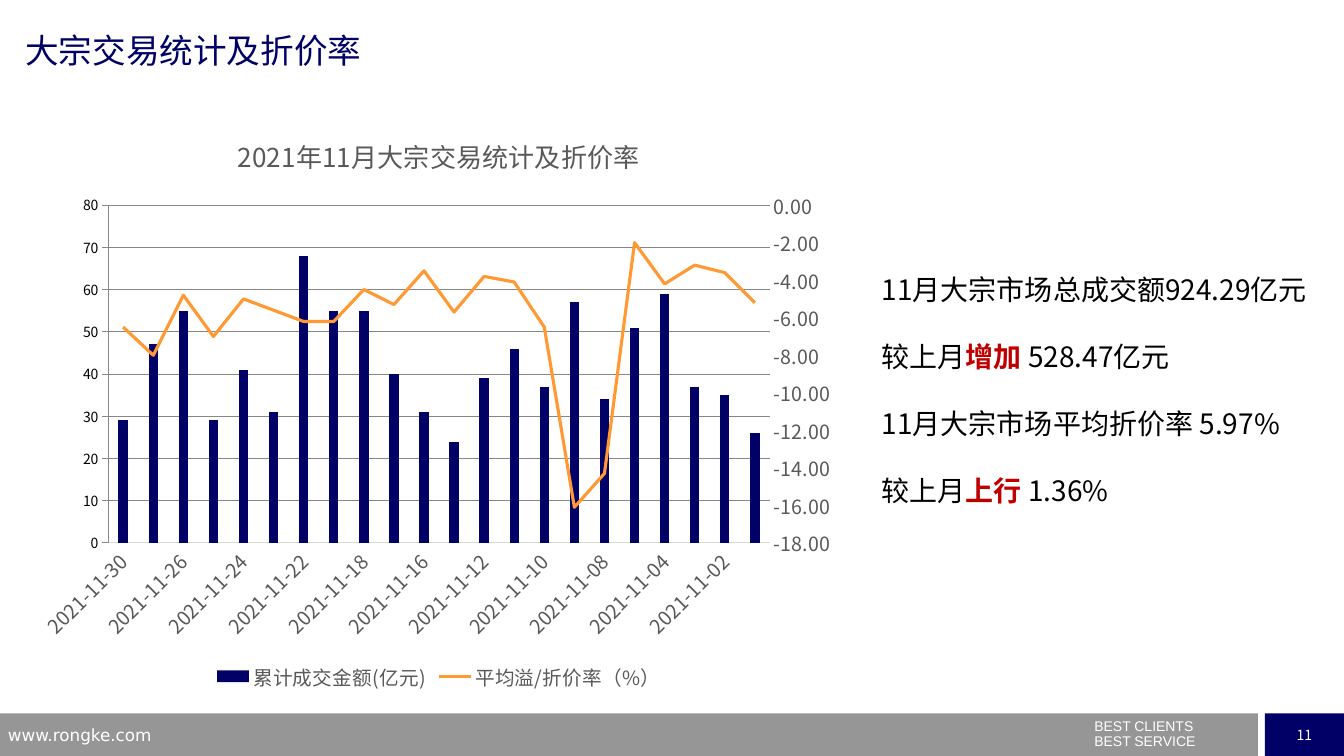
from dataclasses import dataclass

from pptx import Presentation
from pptx import util as u
from pptx.chart import axis as ax, data
from pptx.dml.color import RGBColor
from pptx.enum import chart as ch, shapes, text
from pptx.oxml import parse_xml
from pptx.oxml.ns import nsdecls, qn


@dataclass(frozen=True)
class Theme:
    navy: str = "000066"
    orange: str = "FF9933"
    red: str = "C00000"
    gray: str = "969696"
    label: str = "595959"
    grid: str = "D9D9D9"
    white: str = "FFFFFF"
    black: str = "000000"
    cjk: str = "Noto Sans CJK SC"
    latin: str = "Arial"
    web: str = "DejaVu Sans"
    title: float = 24
    body: float = 20
    chart_title: float = 18.6
    axis: float = 14
    url: float = 12
    small: float = 10


DAYS = (30, 29, 26, 25, 24, 23, 22, 19, 18, 17, 16, 15,
        12, 11, 10, 9, 8, 5, 4, 3, 2, 1)
AMOUNTS = (29, 47, 55, 29, 41, 31, 68, 55, 55, 40, 31, 24,
           39, 46, 37, 57, 34, 51, 59, 37, 35, 26)
RATES = (-6.5, -8, -4.8, -7, -5, -5.6, -6.2, -6.2, -4.5, -5.3, -3.5, -5.7,
         -3.8, -4.1, -6.5, -16.1, -14.3, -2, -4.2, -3.2, -3.6, -5.2)

LINE_PLOT = f"""<c:lineChart {nsdecls('c')}><c:grouping val="standard"/>
<c:varyColors val="0"/><c:marker val="1"/>
<c:axId val="301"/><c:axId val="302"/></c:lineChart>"""
RIGHT_AXIS = f"""<c:valAx {nsdecls('c')}><c:axId val="302"/>
<c:scaling><c:orientation val="minMax"/></c:scaling><c:delete val="0"/>
<c:axPos val="r"/><c:majorTickMark val="out"/><c:minorTickMark val="none"/>
<c:tickLblPos val="nextTo"/><c:crossAx val="301"/><c:crosses val="max"/></c:valAx>"""
HIDDEN_AXIS = f"""<c:catAx {nsdecls('c')}><c:axId val="301"/>
<c:scaling><c:orientation val="minMax"/></c:scaling><c:delete val="1"/>
<c:axPos val="b"/><c:crossAx val="302"/><c:crosses val="autoZero"/></c:catAx>"""
PLOT_LAYOUT = f"""<c:layout {nsdecls('c')}><c:manualLayout>
<c:layoutTarget val="inner"/><c:xMode val="edge"/><c:yMode val="edge"/>
<c:x val="0.1"/><c:y val="0.16"/><c:w val="0.8"/><c:h val="0.58"/>
</c:manualLayout></c:layout>"""


class Deck:
    def __init__(self, theme):
        self.theme = theme
        self.prs = Presentation()
        self.prs.slide_width, self.prs.slide_height = u.Cm(33.87), u.Cm(19.05)
        self.s = self.prs.slides.add_slide(self.prs.slide_layouts[6])

    def font(self, font, size, color, name=None, bold=False):
        font.size, font.bold, font.name = u.Pt(size), bold, name or self.theme.cjk
        font.color.rgb = RGBColor.from_string(color)

    def bar(self, box, color):
        sp = self.s.shapes.add_shape(shapes.MSO_SHAPE.RECTANGLE, *map(u.Cm, box))
        sp.shadow.inherit = False
        sp.fill.solid()
        sp.fill.fore_color.rgb = RGBColor.from_string(color)
        sp.line.fill.background()
        return sp

    def page_number(self, box, number):
        tf = self.bar(box, self.theme.navy).text_frame
        tf.text = number
        tf.vertical_anchor = text.MSO_ANCHOR.MIDDLE
        p = tf.paragraphs[0]
        p.alignment = text.PP_ALIGN.CENTER
        self.font(p.runs[0].font, self.theme.small, self.theme.white)

    def text(self, box, lines, size, color, name=None, spacing=1, before=0, inset=True):
        """Each line is a string or a list of strings; in a list, the second is stressed."""
        tf = self.s.shapes.add_textbox(*map(u.Cm, box)).text_frame
        tf.word_wrap = True
        if not inset:
            tf.margin_left = tf.margin_right = tf.margin_top = tf.margin_bottom = 0
        for i, line in enumerate(lines):
            p = tf.add_paragraph() if i else tf.paragraphs[0]
            p.line_spacing = spacing
            if i and before:
                p.space_before = u.Pt(before)
            for j, part in enumerate([line] if isinstance(line, str) else line):
                r = p.add_run()
                r.text = part
                self.font(r.font, size, self.theme.red if j == 1 else color, name, j == 1)

    def value_axis(self, axis, low, high, step, fmt):
        axis.minimum_scale, axis.maximum_scale, axis.major_unit = low, high, step
        axis.tick_labels.number_format = fmt
        axis.tick_labels.number_format_is_linked = False
        axis.format.line.fill.background()
        self.font(axis.tick_labels.font, self.theme.axis, self.theme.label)

    def grid_line(self, line):
        line.color.rgb = RGBColor.from_string(self.theme.grid)
        line.width = u.Pt(0.75)

    def combo_chart(self, box, title, cats, bars, line):
        """Columns on the left axis and a line on the right one."""
        t = self.theme
        cd = data.CategoryChartData()
        cd.categories = cats
        for name, values in (bars, line):
            cd.add_series(name, values)
        chart = self.s.shapes.add_chart(
            ch.XL_CHART_TYPE.COLUMN_CLUSTERED, *map(u.Cm, box), cd).chart
        self.font(chart.font, t.small, t.black)

        right = self.move_to_line(chart)
        column_plot, line_plot = chart.plots
        column_plot.gap_width = 219
        column_plot.vary_by_categories = False
        columns, curve = column_plot.series[0], line_plot.series[0]
        columns.format.fill.solid()
        columns.format.fill.fore_color.rgb = RGBColor.from_string(t.navy)
        curve.format.line.color.rgb = RGBColor.from_string(t.orange)
        curve.format.line.width = u.Pt(2.25)
        curve.marker.style = ch.XL_MARKER_STYLE.NONE
        curve.smooth = False

        left, dates = chart.value_axis, chart.category_axis
        self.value_axis(left, 0, 80, 10, r"0.00_);[Red]\(0.00\)")
        self.value_axis(right, -18, 0, 2, "0.00")
        left.major_tick_mark = dates.major_tick_mark = ch.XL_TICK_MARK.NONE
        self.grid_line(left.major_gridlines.format.line)
        self.grid_line(dates.format.line)
        self.font(dates.tick_labels.font, t.axis, t.label)
        dates._element.find(qn("c:txPr")).find(qn("a:bodyPr")).set("rot", "-2700000")

        chart.has_title = True
        tf = chart.chart_title.text_frame
        tf.text = title
        self.font(tf.paragraphs[0].runs[0].font, t.chart_title, t.label)
        chart.has_legend = True
        chart.legend.position = ch.XL_LEGEND_POSITION.BOTTOM
        chart.legend.include_in_layout = False
        self.font(chart.legend.font, t.axis, t.label)

    def move_to_line(self, chart):
        """Move the second series to a line plot and return its right axis."""
        area = chart._chartSpace.chart.plotArea
        for layout in area.findall(qn("c:layout")):
            area.remove(layout)
        area.insert(0, parse_xml(PLOT_LAYOUT))
        columns = area.find(qn("c:barChart"))
        ser = columns.findall(qn("c:ser"))[1]
        for invert in ser.findall(qn("c:invertIfNegative")):
            ser.remove(invert)
        plot = parse_xml(LINE_PLOT)
        plot.insert(2, ser)
        columns.addnext(plot)
        right = parse_xml(RIGHT_AXIS)
        area.find(qn("c:valAx")).addnext(right)
        right.addnext(parse_xml(HIDDEN_AXIS))
        return ax.ValueAxis(right)


def main():
    t = Theme()
    deck = Deck(t)
    deck.bar((0, 17.98, 31.7, 1.07), t.gray)
    deck.page_number((31.88, 17.98, 1.99, 1.07), "11")
    deck.text((27.33, 18.14, 6.5, 0.91), ["BEST CLIENTS", "BEST SERVICE"],
              t.small, t.white, t.latin, spacing=0.5, before=5)
    deck.text((-0.05, 18.14, 8.18, 0.66), ["www.rongke.com"], t.url, t.white, t.web)
    deck.text((0.64, 0.76, 9, 1.3), ["大宗交易统计及折价率"], t.title, t.navy, inset=False)
    deck.text((21.97, 5.89, 11.89, 7.09),
              ["11月大宗市场总成交额924.29亿元", ["较上月", "增加 ", "528.47亿元"],
               "11月大宗市场平均折价率 5.97%", ["较上月", "上行 ", "1.36%"]],
              t.body, t.black, spacing=2)
    deck.combo_chart((0.64, 2.82, 20.85, 14.68), "2021年11月大宗交易统计及折价率",
                     [f"2021-11-{day:02}" for day in DAYS],
                     ("累计成交金额(亿元)", AMOUNTS), ("平均溢/折价率（%）", RATES))
    deck.prs.save("out.pptx")


if __name__ == "__main__":
    main()
